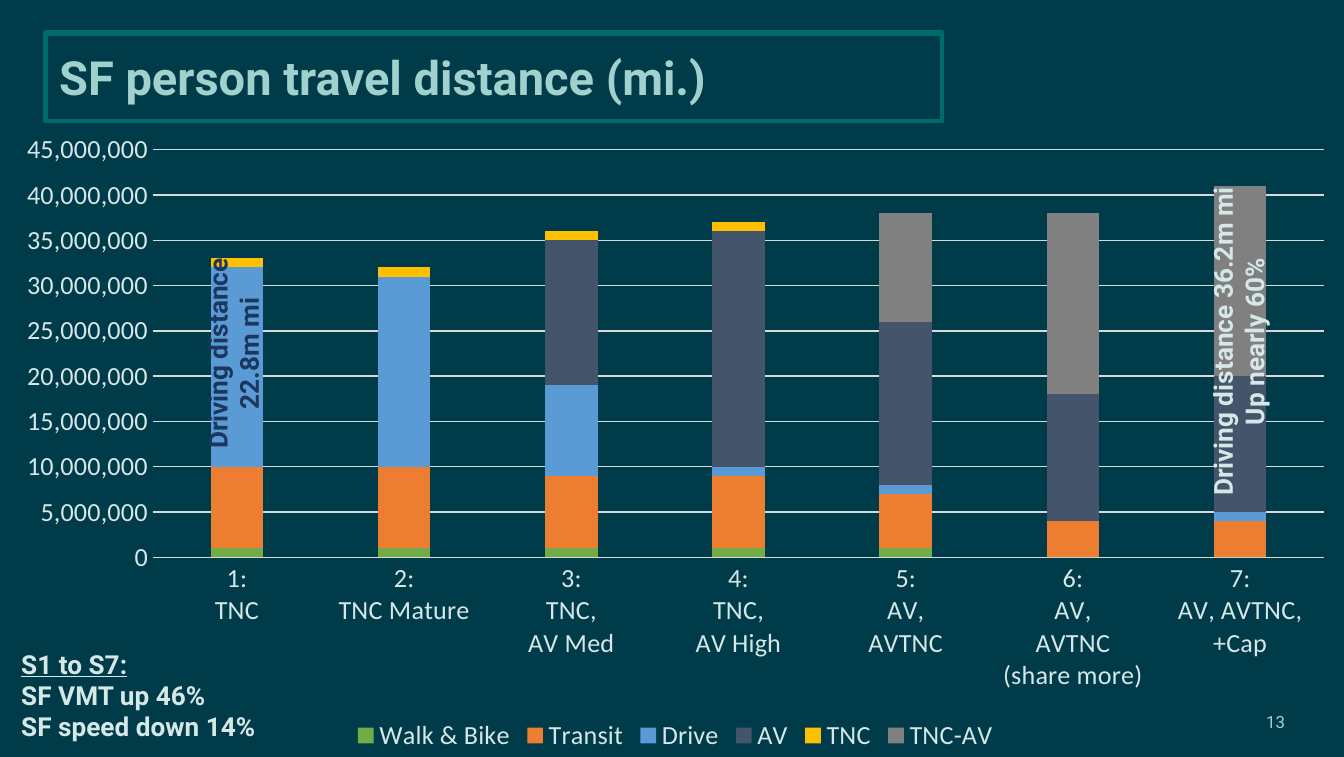
from dataclasses import dataclass

from lxml.etree import SubElement
from pptx import Presentation
from pptx.chart.data import CategoryChartData
from pptx.dml.color import RGBColor
from pptx.enum.chart import XL_CHART_TYPE, XL_LEGEND_POSITION, XL_TICK_MARK
from pptx.enum.shapes import MSO_CONNECTOR
from pptx.enum.text import MSO_ANCHOR, MSO_AUTO_SIZE, PP_ALIGN
from pptx.oxml import parse_xml
from pptx.oxml.ns import nsdecls, qn
from pptx.util import Inches, Pt


@dataclass(frozen=True)
class Theme:
    background: str = "003B49"
    frame: str = "006C69"
    accent: str = "A0D1CC"
    light: str = "D5E7E6"
    navy: str = "1B365F"
    grid: str = "D9D9D9"
    heading_font: str = "Roboto"
    chart_font: str = "Calibri"
    title_size: float = 25.2
    body_size: float = 14
    chart_size: float = 10
    number_size: float = 9
    frame_width: float = 2.5
    grid_width: float = 0.75


THEME = Theme()
MILLION = 1_000_000

SCENARIOS = [
    "1:\nTNC", "2:\nTNC Mature", "3:\nTNC,\nAV Med", "4:\nTNC,\nAV High",
    "5:\nAV,\nAVTNC", "6:\nAV,\nAVTNC\n(share more)", "7:\nAV, AVTNC, +Cap",
]

# Mode, colour, millions of miles per scenario
MODES = [
    ("Walk & Bike", "70AD47", (1, 1, 1, 1, 1, 0, 0)),
    ("Transit", "ED7D31", (9, 9, 8, 8, 6, 4, 4)),
    ("Drive", "5B9BD5", (22, 21, 10, 1, 1, 0, 1)),
    ("AV", "44546A", (0, 0, 16, 26, 18, 14, 15)),
    ("TNC", "FFC000", (1, 1, 1, 1, 0, 0, 0)),
    ("TNC-AV", "808080", (0, 0, 0, 0, 12, 20, 21)),
]


def rgb(color):
    return RGBColor.from_string(color)


def style_font(font, name, size, color, bold=False):
    font.name = name
    font.size = Pt(size)
    font.bold = bold
    font.color.rgb = rgb(color)


def style_line(line, color, width):
    line.color.rgb = rgb(color)
    line.width = Pt(width)


def place(shape, left, top, width, height):
    shape.left, shape.top = Inches(left), Inches(top)
    shape.width, shape.height = Inches(width), Inches(height)


def add_title(slide, text):
    # Rule along the top edge of the frame
    rule = slide.shapes.add_connector(
        MSO_CONNECTOR.STRAIGHT, Inches(0.34), Inches(0.25), Inches(7.01), Inches(0.25))
    style_line(rule.line, THEME.frame, THEME.frame_width)
    SubElement(rule.element.spPr, qn("a:effectLst"))

    # Callout outline on the title placeholder
    title = slide.shapes.title
    place(title, 0.34, 0.24, 6.67, 0.66)
    guides = "".join(
        f'<a:gd name="adj{i}" fmla="val {value}"/>'
        for i, value in enumerate((97900, 99900, 98700, 100), 1))
    title.element.spPr.append(parse_xml(
        f'<a:prstGeom {nsdecls("a")} prst="callout1"><a:avLst>{guides}</a:avLst></a:prstGeom>'))
    style_line(title.line, THEME.frame, THEME.frame_width)

    frame = title.text_frame
    frame.auto_size = MSO_AUTO_SIZE.NONE
    frame.vertical_anchor = MSO_ANCHOR.MIDDLE
    frame.margin_left = frame.margin_right = Inches(0.1)
    frame.margin_top = frame.margin_bottom = Inches(0.1)
    paragraph = frame.paragraphs[0]
    paragraph.alignment = PP_ALIGN.LEFT
    run = paragraph.add_run()
    run.text = text
    style_font(run.font, THEME.heading_font, THEME.title_size, THEME.accent, bold=True)


def add_note(slide, box, lines, color, align=PP_ALIGN.LEFT, size=THEME.body_size,
             bold=True, upward=False, underline_first=False):
    note = slide.shapes.add_textbox(*map(Inches, box))
    frame = note.text_frame
    frame.word_wrap = False
    frame.auto_size = MSO_AUTO_SIZE.SHAPE_TO_FIT_TEXT
    if upward:
        frame._bodyPr.set("vert", "vert270")
    for i, line in enumerate(lines):
        paragraph = frame.add_paragraph() if i else frame.paragraphs[0]
        paragraph.alignment = align
        run = paragraph.add_run()
        run.text = line
        style_font(run.font, THEME.heading_font, size, color, bold)
        if underline_first and i == 0:
            run.font.underline = True
    return note


def add_distance_chart(slide):
    data = CategoryChartData(number_format="#,##0")
    data.categories = SCENARIOS
    for mode, _, millions in MODES:
        data.add_series(mode, [value * MILLION for value in millions])
    chart = slide.shapes.add_chart(
        XL_CHART_TYPE.COLUMN_STACKED, Inches(0), Inches(0.9),
        Inches(10.05), Inches(4.73), data).chart
    chart.has_title = False
    style_font(chart.font, THEME.chart_font, THEME.chart_size, THEME.light)

    # Columns
    plot = chart.plots[0]
    plot.gap_width, plot.overlap = 219, 100
    plot.vary_by_categories = False
    for series, (_, color, _) in zip(plot.series, MODES):
        series.format.fill.solid()
        series.format.fill.fore_color.rgb = rgb(color)

    # Axes
    for axis in (chart.category_axis, chart.value_axis):
        axis.major_tick_mark = axis.minor_tick_mark = XL_TICK_MARK.NONE
        style_font(axis.tick_labels.font, THEME.chart_font, THEME.body_size, THEME.light)
    style_line(chart.category_axis.format.line, THEME.grid, THEME.grid_width)
    distance = chart.value_axis
    distance.minimum_scale, distance.maximum_scale = 0, 45 * MILLION
    distance.major_unit = 5 * MILLION
    distance.format.line.fill.background()
    style_line(distance.major_gridlines.format.line, THEME.grid, THEME.grid_width)
    distance.tick_labels.number_format = "#,##0"
    distance.tick_labels.number_format_is_linked = False

    # Legend
    chart.has_legend = True
    chart.legend.position = XL_LEGEND_POSITION.BOTTOM
    chart.legend.include_in_layout = False
    style_font(chart.legend.font, THEME.chart_font, THEME.body_size, THEME.light)


def main():
    prs = Presentation()
    prs.slide_width, prs.slide_height = Inches(10), Inches(5.63)
    slide = prs.slides.add_slide(prs.slide_layouts[5])
    slide.background.fill.solid()
    slide.background.fill.fore_color.rgb = rgb(THEME.background)

    add_title(slide, "SF person travel distance (mi.)")

    # Slide number
    number = add_note(slide, (7.06, 5.22, 2.6, 0.3), ["13"], THEME.accent,
                      PP_ALIGN.RIGHT, THEME.number_size, bold=False)
    number.text_frame.auto_size = MSO_AUTO_SIZE.NONE
    number.text_frame.word_wrap = True
    number.text_frame.vertical_anchor = MSO_ANCHOR.MIDDLE

    add_distance_chart(slide)

    # Summary and notes over the first and last columns
    add_note(slide, (0.06, 4.77, 2.03, 0.81),
             ["S1 to S7:", "SF VMT up 46%", "SF speed down 14%"],
             THEME.light, underline_first=True)
    add_note(slide, (1.45, 1.85, 0.67, 1.56), ["Driving distance", "22.8m mi"],
             THEME.navy, PP_ALIGN.CENTER, upward=True)
    add_note(slide, (8.93, 1.32, 0.67, 2.44),
             ["Driving distance 36.2m mi", "Up nearly 60%"],
             THEME.light, PP_ALIGN.CENTER, upward=True)

    prs.save("out.pptx")


if __name__ == "__main__":
    main()
